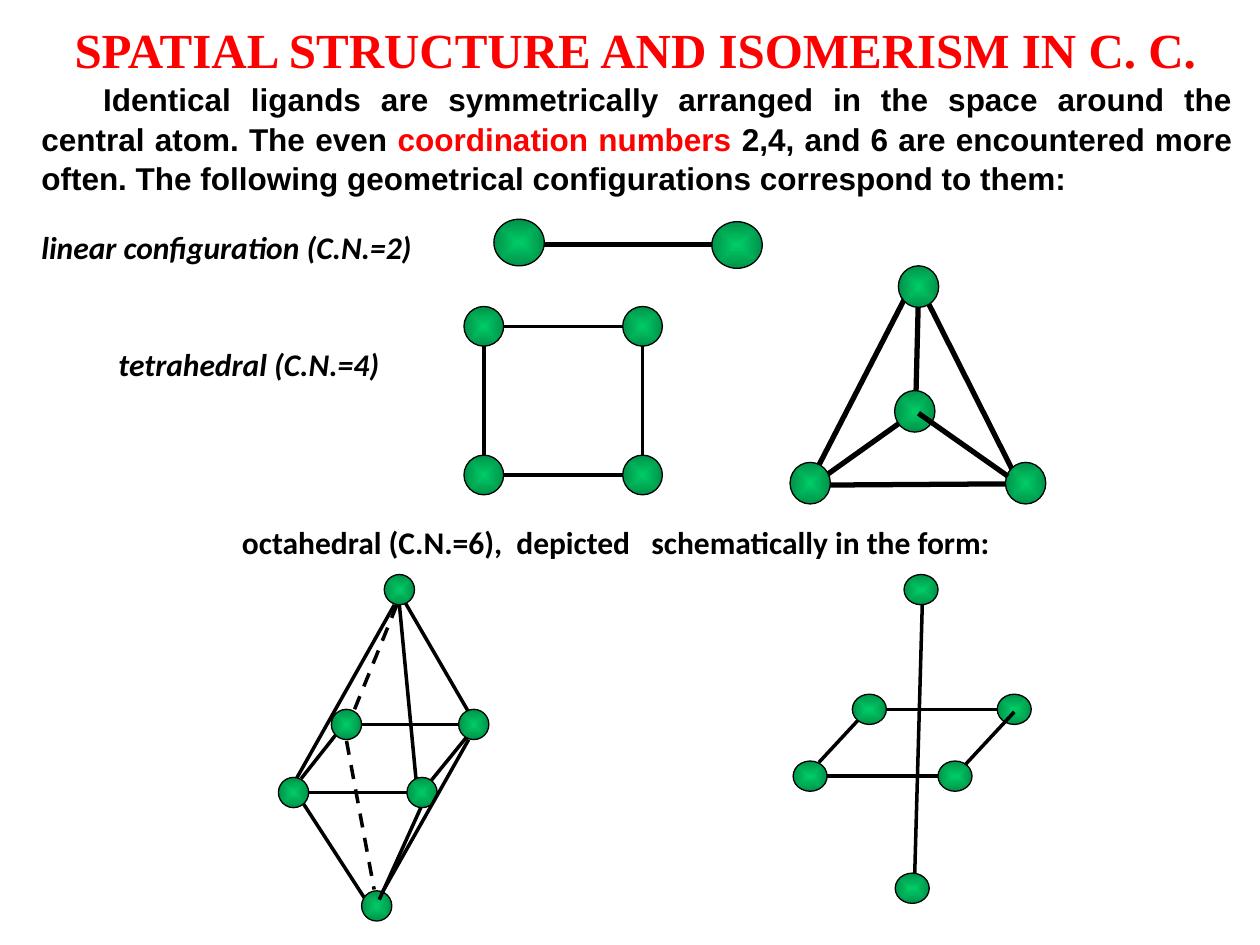
"""Build a slide on the spatial structure of coordination compounds."""
from lxml import etree
from pptx import Presentation
from pptx.dml.color import RGBColor
from pptx.enum.dml import MSO_LINE
from pptx.enum.shapes import MSO_CONNECTOR, MSO_SHAPE
from pptx.enum.text import MSO_ANCHOR, MSO_AUTO_SIZE, PP_ALIGN
from pptx.oxml.ns import qn
from pptx.util import Inches, Pt

SOLID, DASH = MSO_LINE.SOLID, MSO_LINE.DASH
STRAIGHT, OVAL = MSO_CONNECTOR.STRAIGHT, MSO_SHAPE.OVAL
TOP, MIDDLE = MSO_ANCHOR.TOP, MSO_ANCHOR.MIDDLE
CENTER, JUSTIFY = PP_ALIGN.CENTER, PP_ALIGN.JUSTIFY
BLACK = RGBColor(0x00, 0x00, 0x00)
RED = RGBColor(0xFF, 0x00, 0x00)
LIGHT_GREEN = RGBColor(0x00, 0xCC, 0x66)
DARK_GREEN = RGBColor(0x00, 0x92, 0x49)

prs = Presentation()
prs.slide_width, prs.slide_height = Inches(10), Inches(7.5)
COL, ROW = prs.slide_width / 100, prs.slide_height / 75
s = prs.slides.add_slide(prs.slide_layouts[1])


def add_text(tf, text, font="Calibri", size=18, color=BLACK, italic=False,
             align=JUSTIFY, indent=0, spacing=1.0):
    p = tf.paragraphs[0]
    p.alignment, p.line_spacing, p.space_before = align, spacing, Pt(0)
    pPr = p._p.get_or_add_pPr()
    pPr.set("marL", "0")
    pPr.set("indent", str(int(indent * COL)))
    if pPr.find(qn("a:buNone")) is None:
        etree.SubElement(pPr, qn("a:buNone"))
    r = p.add_run()
    r.text = text
    r.font.name, r.font.size = font, Pt(size)
    r.font.bold, r.font.italic = True, italic
    r.font.color.rgb = color


def add_bonds(bonds, width, dash=SOLID):
    for x1, y1, x2, y2 in bonds:
        line = s.shapes.add_connector(STRAIGHT, int(x1 * COL), int(y1 * ROW),
                                      int(x2 * COL), int(y2 * ROW))
        line.line.color.rgb = BLACK
        line.line.width = Pt(width)
        line.line.dash_style = dash
        etree.SubElement(line._element.spPr, qn("a:effectLst"))


title, tetrahedral = s.shapes.title, s.placeholders[1]
linear, octahedral, intro = [s.shapes.add_textbox(0, 0, 0, 0) for _ in range(3)]
for sp, x, y, w, h, anchor in [
    (title, 3.5, 0, 93.8, 7.7, MIDDLE),
    (intro, 2.3, 5.7, 96.5, 10.1, TOP),
    (linear, 2.3, 17.6, 35.6, 4, MIDDLE),
    (tetrahedral, 8.4, 26.9, 23, 4, MIDDLE),
    (octahedral, 8.9, 41, 75.1, 4, MIDDLE),
]:
    sp.left, sp.top = int(x * COL), int(y * ROW)
    sp.width, sp.height = int(w * COL), int(h * ROW)
    tf = sp.text_frame
    tf.word_wrap, tf.auto_size = True, MSO_AUTO_SIZE.NONE
    tf.vertical_anchor = anchor

add_text(title.text_frame, "SPATIAL STRUCTURE AND ISOMERISM IN C. C.",
         font="Times New Roman", size=28, color=RED, align=CENTER)
for text, color in [
    ("Identical ligands are symmetrically arranged in the space around the "
     "central atom. The even ", BLACK),
    ("coordination numbers ", RED),
    ("2,4, and 6 are encountered more often. The following geometrical "
     "configurations correspond to them:", BLACK),
]:
    add_text(intro.text_frame, text, font="Arial", color=color, indent=4.9,
             spacing=1.05)
add_text(linear.text_frame, "linear configuration (C.N.=2)", italic=True)
add_text(tetrahedral.text_frame, "tetrahedral (C.N.=4)", italic=True)
add_text(octahedral.text_frame,
         "octahedral (C.N.=6),  depicted   schematically in the form:",
         align=CENTER, indent=4.9)

left, right, top, bottom = 38.4, 51, 25.9, 37.7
structures = [
    dict(width=3, size=(4, 3.7),
         atoms=[(41.2, 19.25), (58.5, 19.45)],
         back=[(43.2, 19.4, 57.8, 19.4)]),
    dict(width=2, size=(3.15, 3.15),
         atoms=[(x, y) for x in (left, right) for y in (top, bottom)],
         back=[(left, y, right, y) for y in (top, bottom)]
         + [(x, top, x, bottom) for x in (left, right)]),
    dict(width=3, size=(3.2, 3.3),
         atoms=[(64.3, 38.35), (81.4, 38.35), (72.6, 32.65), (72.9, 22.75)],
         back=[(72.7, 31.3, 72.9, 23.2), (64.9, 38.2, 72.2, 33),
               (65.1, 38.5, 80.6, 38.4), (80.4, 37.4, 73.4, 23.5),
               (64.9, 37.1, 71.8, 23.7)],
         front=[(80, 37.8, 72.9, 32.8)]),
    dict(width=2, size=(2.4, 2.4),
         atoms=[(31.7, 46.8), (29.9, 71.9), (37.6, 57.5), (27.5, 57.5),
                (33.5, 62.9), (23.3, 62.9)],
         back=[(23.9, 63.5, 29.4, 72), (28.4, 57.5, 37.3, 57.5),
               (23.9, 62.9, 32.8, 62.9), (37.6, 57.8, 34.1, 62.1),
               (27.3, 57.5, 23.9, 61.8), (31.3, 48, 23.3, 62.2),
               (31.7, 48, 33.1, 62.7), (32.2, 47.9, 37.3, 56.7)],
         dashed=[(31.5, 48, 28.1, 56.4), (27.5, 58.8, 29.7, 70.6)],
         front=[(33.4, 64.1, 30.1, 71.4), (37.2, 58.7, 30.3, 70.9)]),
    dict(width=2, size=(2.7, 2.4),
         atoms=[(64.3, 61.6), (75.8, 61.6), (80.5, 56.3), (69, 56.3),
                (72.4, 70.5), (73.1, 46.8)],
         back=[(70.1, 56.3, 80.2, 56.3), (65, 61.6, 75.2, 61.6),
               (68.9, 56.3, 65, 60.5)],
         front=[(80.5, 56.5, 76.6, 60.7), (73.2, 48, 72.6, 69.3)]),
]

for st in structures:
    add_bonds(st["back"], st["width"])
    add_bonds(st.get("dashed", []), st["width"], DASH)
    w, h = st["size"]
    for x, y in st["atoms"]:
        atom = s.shapes.add_shape(OVAL, int((x - w / 2) * COL), int((y - h / 2) * ROW),
                                  int(w * COL), int(h * ROW))
        atom.shadow.inherit = False
        atom.line.color.rgb, atom.line.width = BLACK, Pt(0.75)
        atom.fill.gradient()
        for stop, color, position in zip(atom.fill.gradient_stops,
                                         (LIGHT_GREEN, DARK_GREEN), (0, 1)):
            stop.color.rgb, stop.position = color, position
        grad = atom._element.spPr.find(qn("a:gradFill"))
        grad.remove(grad.find(qn("a:lin")))
        shade = etree.SubElement(grad, qn("a:path"), path="shape")
        etree.SubElement(shade, qn("a:fillToRect"), l="50000", t="50000",
                         r="50000", b="50000")
    add_bonds(st.get("front", []), st["width"])

prs.save("out.pptx")
